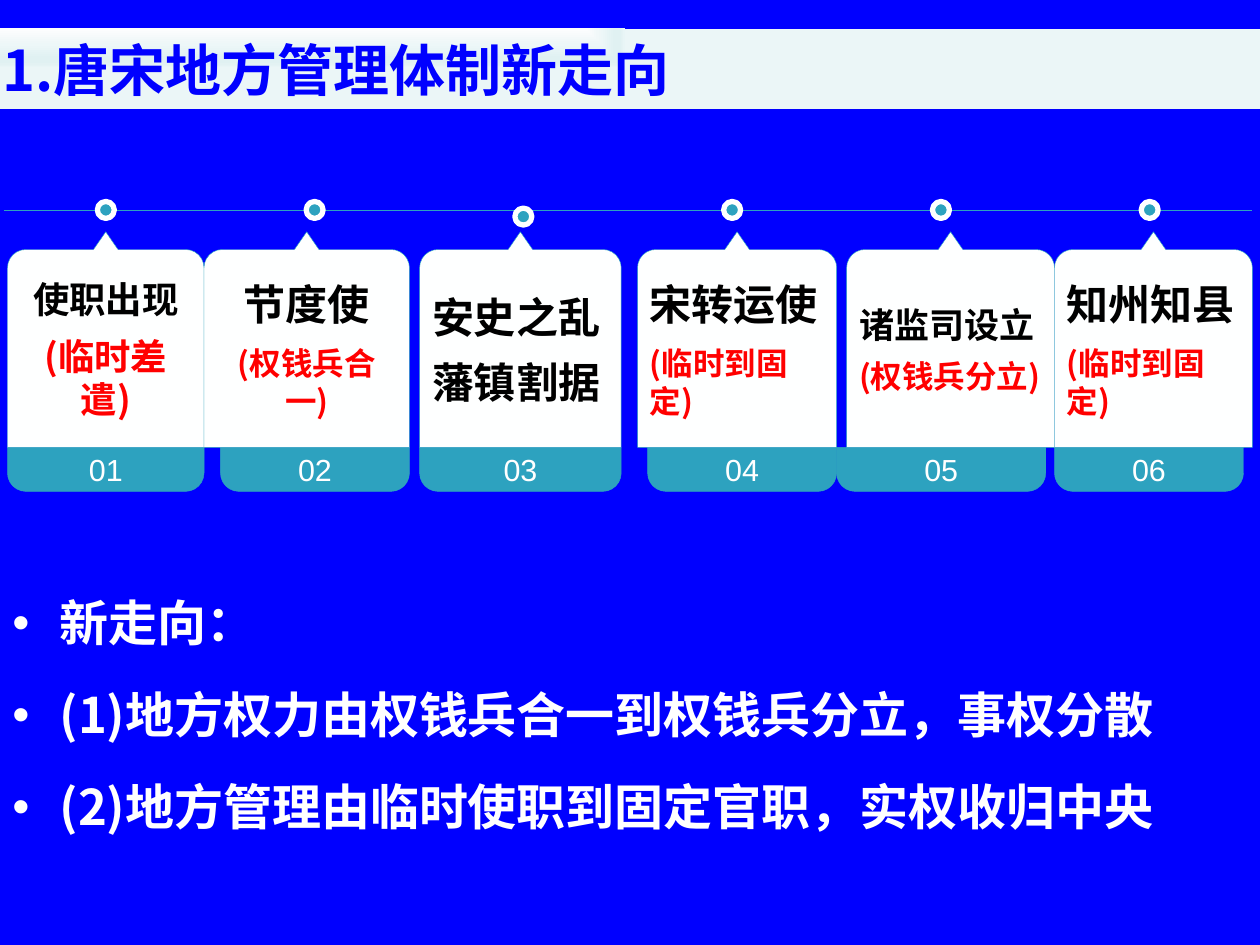
from math import cos, pi, sin

from pptx import Presentation
from pptx.dml.color import RGBColor
from pptx.enum.shapes import MSO_CONNECTOR, MSO_SHAPE
from pptx.enum.text import MSO_ANCHOR, PP_ALIGN
from pptx.oxml import parse_xml
from pptx.oxml.ns import nsdecls, qn
from pptx.util import Pt

BLUE, TEAL, WHITE = "0000FF", "2DA2BF", "FFFFFF"
PAPER, BLACK, RED = "FEFFFF", "000000", "FF0000"
HEADING_FONT, NOTE_FONT, NUMBER_FONT = "Noto Sans CJK SC", "Noto Sans CJK JP", "Arial"
LEFT, CENTER = PP_ALIGN.LEFT, PP_ALIGN.CENTER

TIP_TOP, CARD_TOP, SEAM, BASE_BOTTOM = 132.5, 142.6, 255.6, 280.8
RADIUS, TIP_HALF, DOT_SIZE = 10.5, 7, 9.7
LINE_Y, FIRST_DOT, DOT_STEP = 120, 60.5, 119.3

# Card left and right, base left and right, dot drop, alignment, (text, size, colour) lines
STAGES = [
    (4.3, 116.6, 4.3, 116.6, 0, CENTER, [("使职出现", 20.8, BLACK), ("(临时差遣)", 20.8, RED)]),
    (116.6, 234, 126, 234, 0, CENTER, [("节度使", 24, BLACK), ("(权钱兵合一)", 18, RED)]),
    (239.8, 355, 239.8, 355, 3.8, LEFT, [("安史之乱", 24, BLACK), ("藩镇割据", 24, BLACK)]),
    (364.3, 478.1, 370.1, 478.1, 0, LEFT, [("宋转运使", 24, BLACK), ("(临时到固定)", 18, RED)]),
    (483.8, 602.6, 478.1, 597.6, 0, LEFT, [("诸监司设立", 20, BLACK), ("(权钱兵分立)", 18, RED)]),
    (602.6, 715.7, 602.6, 710.6, 0, LEFT, [("知州知县", 24, BLACK), ("(临时到固定)", 18, RED)]),
]
CONCLUSIONS = [
    ("新走向：", HEADING_FONT),
    ("(1)地方权力由权钱兵合一到权钱兵分立，事权分散", NOTE_FONT),
    ("(2)地方管理由临时使职到固定官职，实权收归中央", NOTE_FONT),
]
TITLE_STOPS = [(0, "FCFDFE"), (74, "E0F1F2"), (83, "E0F1F2"), (100, "EBF6F7")]


def color(hex_code):
    return RGBColor.from_string(hex_code)


def corner(center_x, center_y, start):
    """Points of a quarter circle, clockwise on the page from the start angle in degrees."""
    angles = [(start + step * 15) * pi / 180 for step in range(7)]
    return [(center_x + RADIUS * cos(a), center_y + RADIUS * sin(a)) for a in angles]


class TimelinePage:
    def __init__(self, page):
        self.page = page
        page.background.fill.solid()
        page.background.fill.fore_color.rgb = color(BLUE)

    def paint(self, shape, fill, line, weight):
        shape.shadow.inherit = False
        shape.fill.solid()
        shape.fill.fore_color.rgb = color(fill)
        shape.line.color.rgb = color(line)
        shape.line.width = Pt(weight)

    def style_text(self, para, text, size, font, hex_code, bold=True, align=LEFT, leading=1.2):
        para.text = text
        para.alignment = align
        para.line_spacing = Pt(round(size * leading, 1))
        span = para.runs[0]
        span.font.size, span.font.name, span.font.bold = Pt(size), font, bold
        span.font.color.rgb = color(hex_code)
        properties = span.font._element
        properties.find(qn("a:latin")).addnext(
            parse_xml(f'<a:ea {nsdecls("a")} typeface="{font}"/>'))

    def title(self, text):
        box = self.page.shapes.add_shape(MSO_SHAPE.RECTANGLE, Pt(-5.8), Pt(16.3), Pt(727.2), Pt(46))
        box.shadow.inherit = False
        box.line.fill.background()
        stops = "".join(f'<a:gs pos="{place * 1000}"><a:srgbClr val="{code}"/></a:gs>'
                        for place, code in TITLE_STOPS)
        box._element.spPr.find(qn("a:prstGeom")).addnext(parse_xml(
            f'<a:gradFill {nsdecls("a")} rotWithShape="1"><a:gsLst>{stops}</a:gsLst>'
            '<a:path path="rect"><a:fillToRect r="100000" b="100000"/></a:path></a:gradFill>'))
        self.style_text(box.text_frame.paragraphs[0], text, 32, HEADING_FONT, BLUE)

    def axis(self):
        line = self.page.shapes.add_connector(
            MSO_CONNECTOR.STRAIGHT, Pt(2.2), Pt(LINE_Y), Pt(715.7), Pt(LINE_Y))
        line.line.color.rgb = color(TEAL)
        line.line.width = Pt(0.5)
        line._element.spPr.append(parse_xml(f'<a:effectLst {nsdecls("a")}/>'))

    def outline(self, shapes, points, fill):
        corners = [(Pt(x), Pt(y)) for x, y in points]
        builder = shapes.build_freeform(*corners[0])
        builder.add_line_segments(corners[1:], close=True)
        shape = builder.convert_to_shape()
        self.paint(shape, fill, TEAL, 0.25)
        shape.text_frame.word_wrap = True
        shape.text_frame.vertical_anchor = MSO_ANCHOR.MIDDLE
        return shape

    def base(self, shapes, left, right, number):
        low = BASE_BOTTOM - RADIUS
        points = [(left, SEAM), (right, SEAM),
                  *corner(right - RADIUS, low, 0), *corner(left + RADIUS, low, 90)]
        shape = self.outline(shapes, points, TEAL)
        self.style_text(shape.text_frame.paragraphs[0], f"{number:02}", 17.4, NUMBER_FONT, WHITE,
                        bold=False, align=CENTER)

    def card(self, shapes, left, right, align, lines):
        middle, high = (left + right) / 2, CARD_TOP + RADIUS
        points = [(middle, TIP_TOP), (middle + TIP_HALF, CARD_TOP),
                  *corner(right - RADIUS, high, 270), (right, SEAM), (left, SEAM),
                  *corner(left + RADIUS, high, 180), (middle - TIP_HALF, CARD_TOP)]
        frame = self.outline(shapes, points, PAPER).text_frame
        frame.margin_top = Pt(14.4)
        frame.text = "\n".join(text for text, _, _ in lines)
        for para, (text, size, hex_code) in zip(frame.paragraphs, lines):
            font = NOTE_FONT if text == "(临时差遣)" else HEADING_FONT
            self.style_text(para, text, size, font, hex_code, align=align)
            para.space_after = Pt(round(size * 0.35, 1))

    def dot(self, center_x, center_y):
        shape = self.page.shapes.add_shape(
            MSO_SHAPE.OVAL, Pt(center_x - DOT_SIZE / 2), Pt(center_y - DOT_SIZE / 2),
            Pt(DOT_SIZE), Pt(DOT_SIZE))
        self.paint(shape, TEAL, PAPER, 3)

    def bullets(self, items):
        box = self.page.shapes.add_textbox(Pt(0), Pt(321.8), Pt(720), Pt(179.3))
        frame = box.text_frame
        frame.word_wrap = True
        frame.text = "\n".join(text for text, _ in items)
        for para, (text, font) in zip(frame.paragraphs, items):
            self.style_text(para, text, 28, font, WHITE, leading=1.68)
            para.space_before = Pt(5.6)
            properties = para._p.get_or_add_pPr()
            properties.set("marL", str(Pt(27)))
            properties.set("indent", str(Pt(-27)))
            properties.append(parse_xml(f'<a:buFont {nsdecls("a")} typeface="{NUMBER_FONT}"/>'))
            properties.append(parse_xml(f'<a:buChar {nsdecls("a")} char="•"/>'))


def main():
    deck = Presentation()
    deck.slide_width, deck.slide_height = Pt(720), Pt(540)
    timeline = TimelinePage(deck.slides.add_slide(deck.slide_layouts[6]))
    timeline.title("1.唐宋地方管理体制新走向")
    timeline.axis()
    for index, stage in enumerate(STAGES):
        left, right, base_left, base_right, drop, align, lines = stage
        group = timeline.page.shapes.add_group_shape()
        timeline.base(group.shapes, base_left, base_right, index + 1)
        timeline.card(group.shapes, left, right, align, lines)
        timeline.dot(FIRST_DOT + index * DOT_STEP, LINE_Y + drop)
    timeline.bullets(CONCLUSIONS)
    deck.save("out.pptx")


if __name__ == "__main__":
    main()
